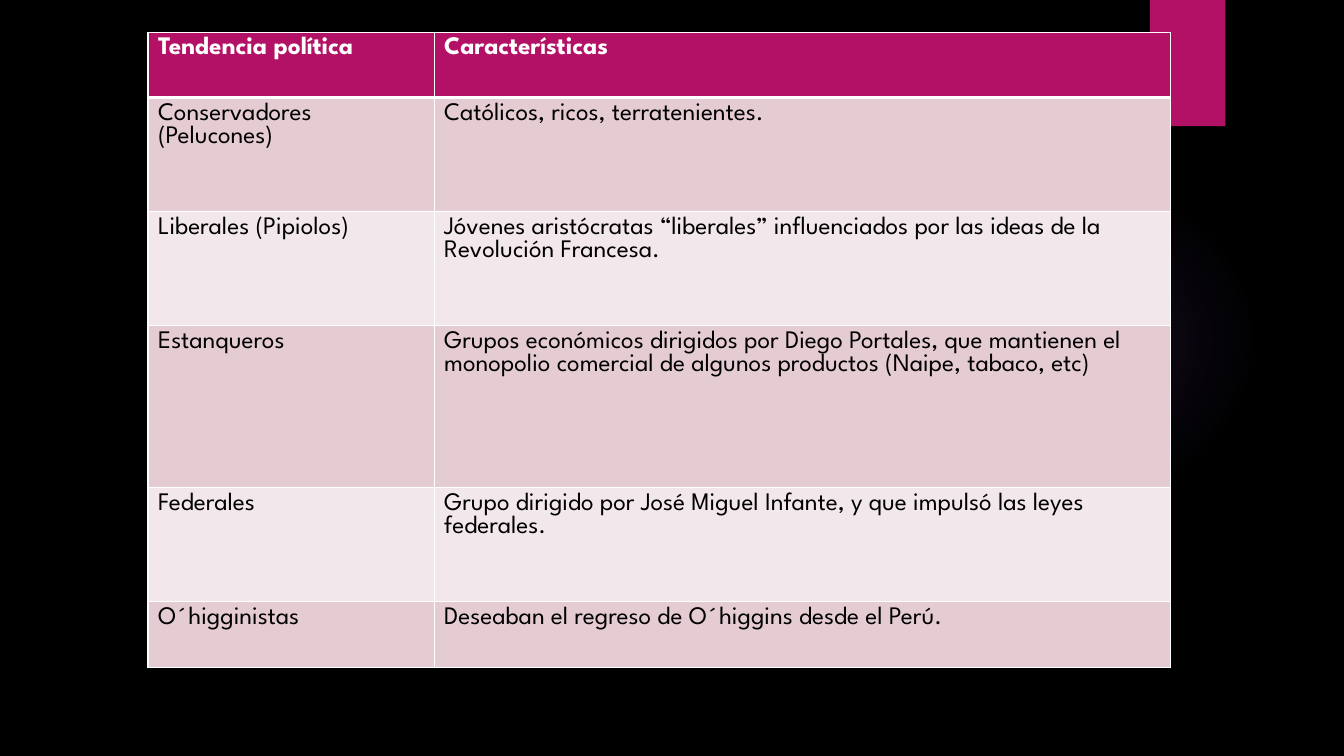
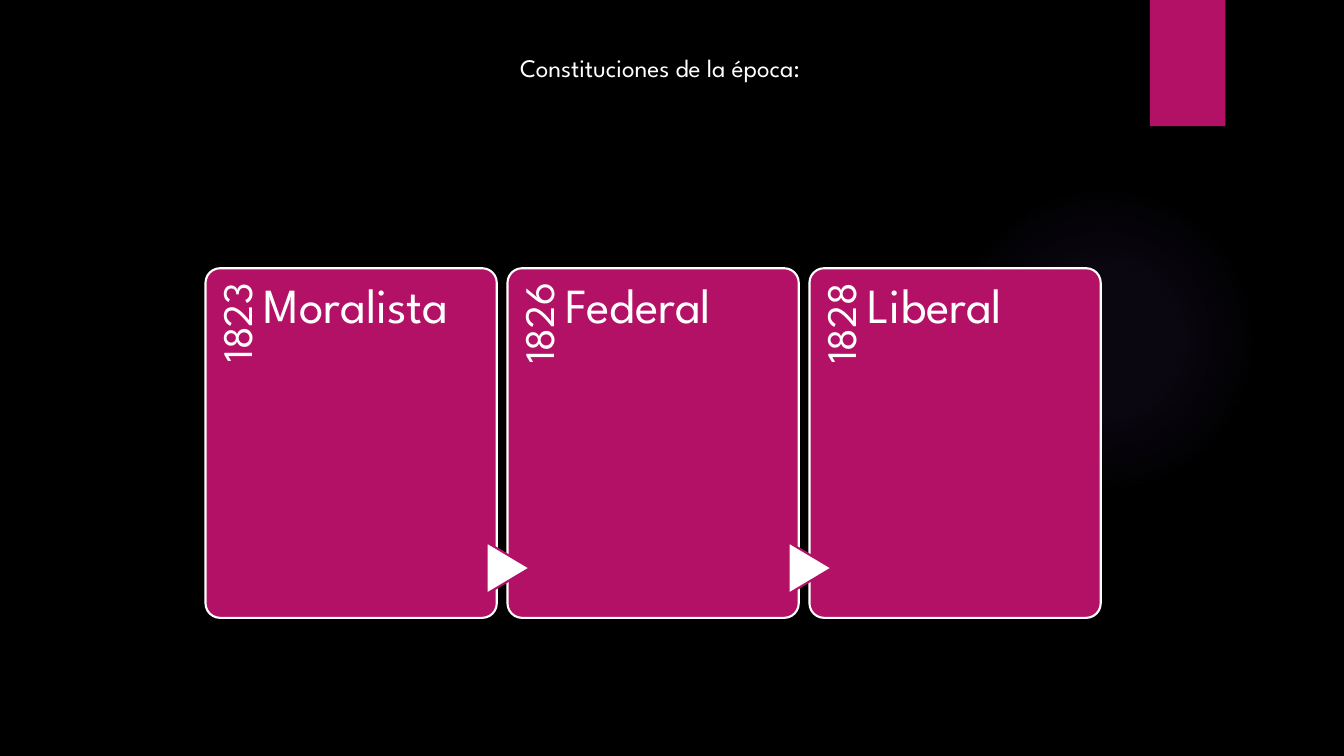
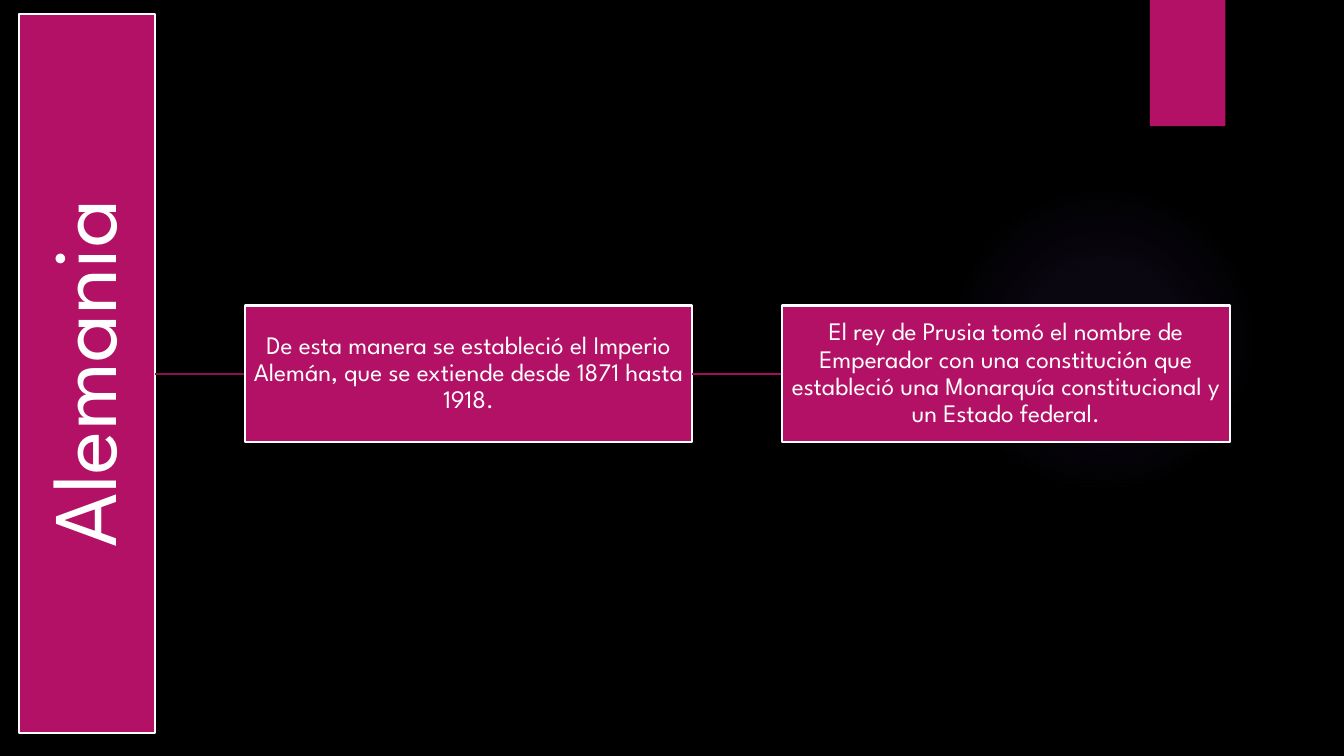
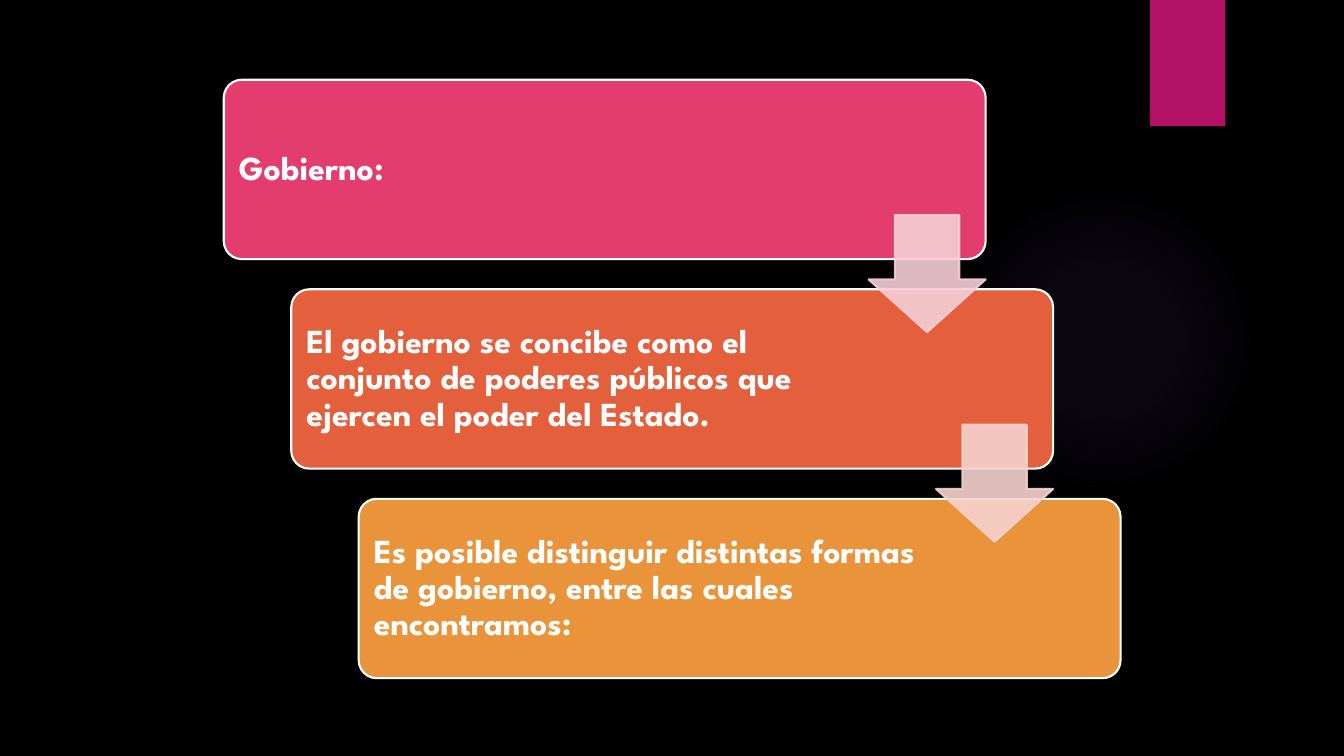
from lxml.etree import SubElement
from pptx import Presentation
from pptx.dml.color import RGBColor
from pptx.enum.shapes import MSO_CONNECTOR, MSO_SHAPE
from pptx.enum.text import MSO_ANCHOR, MSO_AUTO_SIZE, PP_ALIGN
from pptx.oxml import parse_xml
from pptx.oxml.ns import nsdecls, qn
from pptx.util import Cm, Pt

FONT = "League Spartan"
COLORS = {
    "black": "000000", "white": "FFFFFF", "magenta": "B31166",
    "glow": "9B6BF2", "row_dark": "E5CCD3", "row_light": "F2E7EA",
    "link_near": "8F0E52", "link_far": "A20F5D",
    "pink": "E33D6F", "orange": "E45F3C", "amber": "E9943A",
    "arrow_pink": "F4CED5", "arrow_orange": "F5D2CE",
}
TENDENCIES = [
    ("Tendencia política", "Características"),
    ("Conservadores (Pelucones)", "Católicos, ricos, terratenientes."),
    ("Liberales (Pipiolos)",
     "Jóvenes aristócratas “liberales” influenciados por las ideas de la "
     "Revolución Francesa."),
    ("Estanqueros",
     "Grupos económicos dirigidos por Diego Portales, que mantienen el "
     "monopolio comercial de algunos productos (Naipe, tabaco, etc)"),
    ("Federales",
     "Grupo dirigido por José Miguel Infante, y que impulsó las leyes federales."),
    ("O´higginistas", "Deseaban el regreso de O´higgins desde el Perú."),
]
CONSTITUTIONS = [("1823", "Moralista"), ("1826", "Federal"), ("1828", "Liberal")]
GERMANY = [
    "De esta manera se estableció el Imperio Alemán, que se extiende desde "
    "1871 hasta 1918.",
    "El rey de Prusia tomó el nombre de Emperador con una constitución que "
    "estableció una Monarquía constitucional y un Estado federal.",
]
GOVERNMENT = [
    ("Gobierno:", "pink"),
    ("El gobierno se concibe como el conjunto de poderes públicos que ejercen "
     "el poder del Estado.", "orange"),
    ("Es posible distinguir distintas formas de gobierno, entre las cuales "
     "encontramos:", "amber"),
]


def rgb(name):
    return RGBColor.from_string(COLORS[name])


def add_box(slide, kind, box, fill, line=None, adj=(), rotation=0):
    sp = slide.shapes.add_shape(kind, *map(Cm, box))
    sp.shadow.inherit = False
    sp.rotation = rotation
    for i, value in enumerate(adj):
        sp.adjustments[i] = value
    sp.fill.solid()
    sp.fill.fore_color.rgb = rgb(fill)
    if line:
        sp.line.color.rgb = rgb(line)
        sp.line.width = Pt(1.5)
    else:
        sp.line.fill.background()
    return sp


def write(tf, text, size, color="white", bold=False, align=PP_ALIGN.LEFT,
          anchor=MSO_ANCHOR.TOP, margins=None, spacing=None):
    """Fill a frame with one paragraph; margins are left, top, right, bottom in cm."""
    tf.word_wrap = True
    tf.vertical_anchor = anchor
    if margins:
        (tf.margin_left, tf.margin_top,
         tf.margin_right, tf.margin_bottom) = map(Cm, margins)
    p = tf.paragraphs[0]
    p.text = text
    p.alignment = align
    p.line_spacing = spacing
    p.font.name = FONT
    p.font.size = Pt(size)
    p.font.bold = bold
    p.font.color.rgb = rgb(color)


def add_link(slide, x1, x2, y, color):
    line = slide.shapes.add_connector(
        MSO_CONNECTOR.STRAIGHT, Cm(x1), Cm(y), Cm(x2), Cm(y))
    line.line.color.rgb = rgb(color)
    line.line.width = Pt(1.5)
    SubElement(line.element.spPr, qn("a:effectLst"))


def set_alpha(sp, percent):
    for clr in sp.element.spPr.iter(qn("a:srgbClr")):
        SubElement(clr, qn("a:alpha")).set("val", str(percent * 1000))


def fill_glow(sp):
    stops = "".join(
        f'<a:gs pos="{pos}000"><a:srgbClr val="{COLORS["glow"]}">'
        f'<a:alpha val="{alpha}000"/></a:srgbClr></a:gs>'
        for pos, alpha in ((0, 7), (36, 6), (69, 0)))
    grad = parse_xml(
        f'<a:gradFill {nsdecls("a")}><a:gsLst>{stops}</a:gsLst><a:path path="circle">'
        '<a:fillToRect l="50000" t="50000" r="50000" b="50000"/></a:path></a:gradFill>')
    solid = sp.element.spPr.find(qn("a:solidFill"))
    solid.getparent().replace(solid, grad)


def set_master(prs, slide):
    """Put the background, glow and corner band on the master, drawn by way of a slide."""
    master = prs.slide_master
    master.background.fill.solid()
    master.background.fill.fore_color.rgb = rgb("black")
    glow = add_box(slide, MSO_SHAPE.OVAL, (23.9, 4.65, 7.82, 7.82), "glow")
    fill_glow(glow)
    band = add_box(slide, MSO_SHAPE.RECTANGLE, (28.98, 0, 1.9, 3.18), "magenta")
    for shape_id, sp in enumerate((glow, band), 100):
        sp.element.xpath(".//p:cNvPr")[0].set("id", str(shape_id))
        master.shapes.element.append(sp.element)


def set_borders(cell, bottom):
    tcPr = cell._tc.get_or_add_tcPr()
    widths = {"L": 1, "R": 1, "T": 1, "B": bottom}
    for i, (side, width) in enumerate(widths.items()):
        tcPr.insert(i, parse_xml(
            f'<a:ln{side} {nsdecls("a")} w="{Pt(width)}"><a:solidFill>'
            f'<a:srgbClr val="{COLORS["white"]}"/></a:solidFill></a:ln{side}>'))


def build_tendencies(slide):
    widths = (7.21, 18.55)
    heights = (1.65, 2.87, 2.87, 4.09, 2.87, 1.65)
    table = slide.shapes.add_table(
        len(heights), len(widths), Cm(3.73), Cm(0.81),
        Cm(sum(widths)), Cm(sum(heights))).table
    for column, width in zip(table.columns, widths):
        column.width = Cm(width)
    for i, (row, height, texts) in enumerate(zip(table.rows, heights, TENDENCIES)):
        row.height = Cm(height)
        header = i == 0
        fill = "magenta" if header else ("row_light", "row_dark")[i % 2]
        for cell, text in zip(row.cells, texts):
            cell.fill.solid()
            cell.fill.fore_color.rgb = rgb(fill)
            set_borders(cell, 3 if header else 1)
            write(cell.text_frame, text, 18, "white" if header else "black", header)


def build_constitutions(slide):
    title = slide.shapes.title
    title.left, title.top, title.width, title.height = map(Cm, (5.18, 1.19, 22.91, 1.02))
    write(title.text_frame, "Constituciones de la época:", 18, align=PP_ALIGN.CENTER)
    title.text_frame.auto_size = MSO_AUTO_SIZE.NONE
    top, width, height, gap = 6.76, 7.34, 8.81, 0.27
    for i, (year, name) in enumerate(CONSTITUTIONS):
        x = 5.18 + i * (width + gap)
        card = add_box(slide, MSO_SHAPE.ROUNDED_RECTANGLE, (x, top, width, height),
                       "magenta", "white", [0.05])
        write(card.text_frame, name, 35, margins=(1.36, 0.22, 0.27, 0), spacing=0.9)
        label = slide.shapes.add_textbox(Cm(x - 2.9), Cm(9.63), Cm(7.24), Cm(1.47))
        label.rotation = 270
        write(label.text_frame, year, 30, align=PP_ALIGN.RIGHT,
              margins=(0, 0.28, 0.38, 0), spacing=0.9)
        if i:
            add_box(slide, MSO_SHAPE.FLOWCHART_EXTRACT, (x - 0.63, 13.77, 1.3, 1.09),
                    "white", "magenta", rotation=90)


def build_germany(slide):
    top, width, height, gap = 7.7, 11.28, 3.43, 2.26
    bar_right, bar_length = 3.91, 18.11
    middle = top + height / 2
    bar_left = bar_right - (bar_length + height) / 2
    bar = add_box(slide, MSO_SHAPE.RECTANGLE, (bar_left, top, bar_length, height),
                  "magenta", "white", rotation=270)
    write(bar.text_frame, "Alemania", 65, align=PP_ALIGN.CENTER,
          anchor=MSO_ANCHOR.MIDDLE, margins=[0.13] * 4, spacing=0.9)
    for i, (text, link) in enumerate(zip(GERMANY, ("link_near", "link_far"))):
        x = bar_right + gap + i * (width + gap)
        add_link(slide, x - gap, x, middle, link)
        sp = add_box(slide, MSO_SHAPE.RECTANGLE, (x, top, width, height),
                     "magenta", "white")
        write(sp.text_frame, text, 18, align=PP_ALIGN.CENTER,
              anchor=MSO_ANCHOR.MIDDLE, margins=[0.03] * 4, spacing=0.9)


def build_government(slide):
    left, top, width, height = 5.64, 2.01, 19.2, 4.52
    step_x, step_y, arrow_size = 1.7, 5.28, 2.95
    for i, (text, fill) in enumerate(GOVERNMENT):
        step = add_box(slide, MSO_SHAPE.ROUNDED_RECTANGLE,
                       (left + i * step_x, top + i * step_y, width, height),
                       fill, "white", [0.1])
        write(step.text_frame, text, 24, bold=True, anchor=MSO_ANCHOR.MIDDLE,
              margins=(0.25, 0.25, 4.88, 0.25), spacing=0.9)
    for i, color in enumerate(("arrow_pink", "arrow_orange")):
        x = left + i * step_x + width - arrow_size
        arrow = add_box(slide, MSO_SHAPE.DOWN_ARROW,
                        (x, top + i * step_y + 3.41, arrow_size, arrow_size),
                        color, color, (0.55, 0.45))
        set_alpha(arrow, 90)


def main():
    prs = Presentation()
    prs.slide_width, prs.slide_height = Cm(33.87), Cm(19.05)
    title_only, blank = prs.slide_layouts[5], prs.slide_layouts[6]
    pages = [(blank, build_tendencies), (title_only, build_constitutions),
             (blank, build_germany), (blank, build_government)]
    for i, (layout, build) in enumerate(pages):
        slide = prs.slides.add_slide(layout)
        if i == 0:
            set_master(prs, slide)
        build(slide)
    prs.save("out.pptx")


if __name__ == "__main__":
    main()
